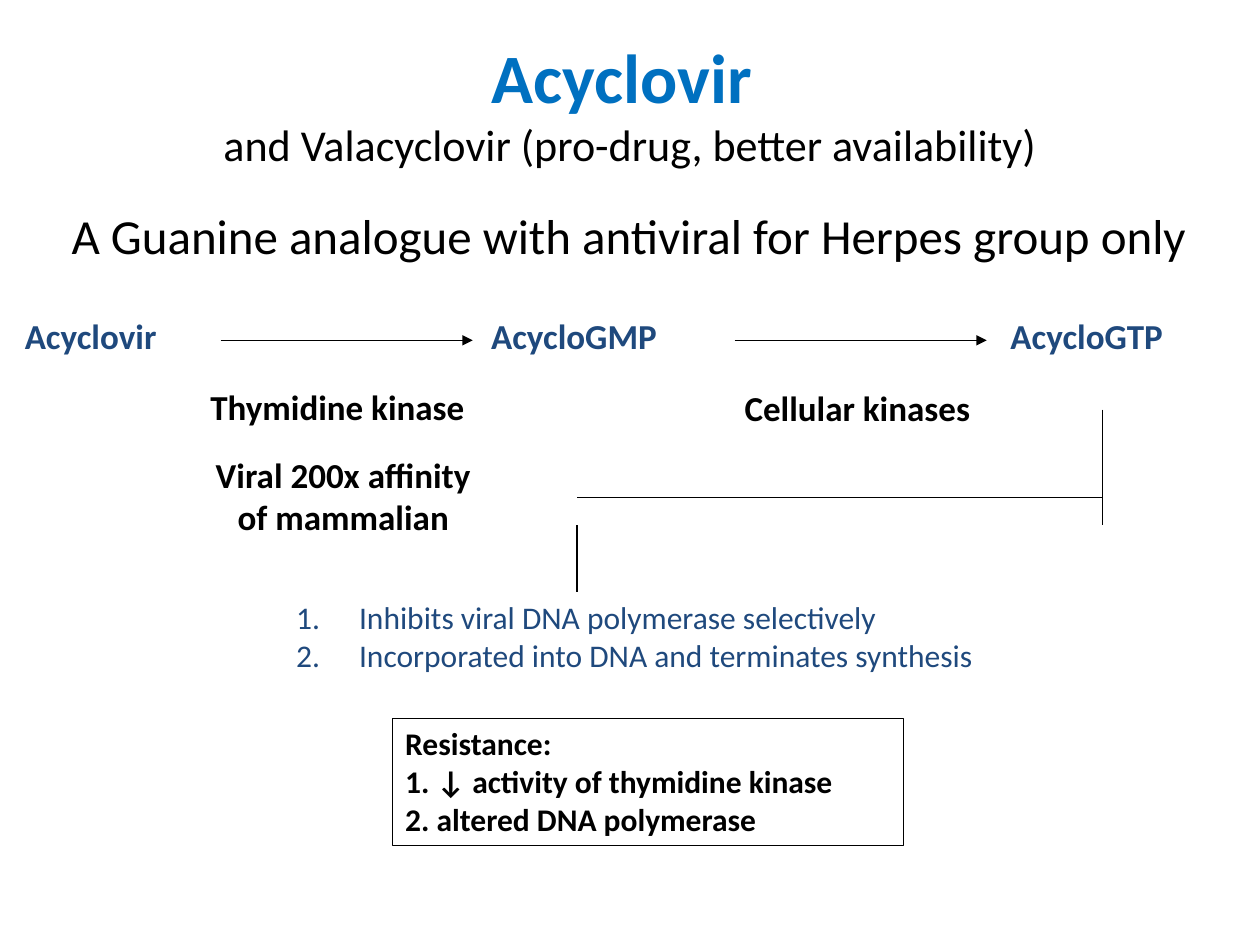
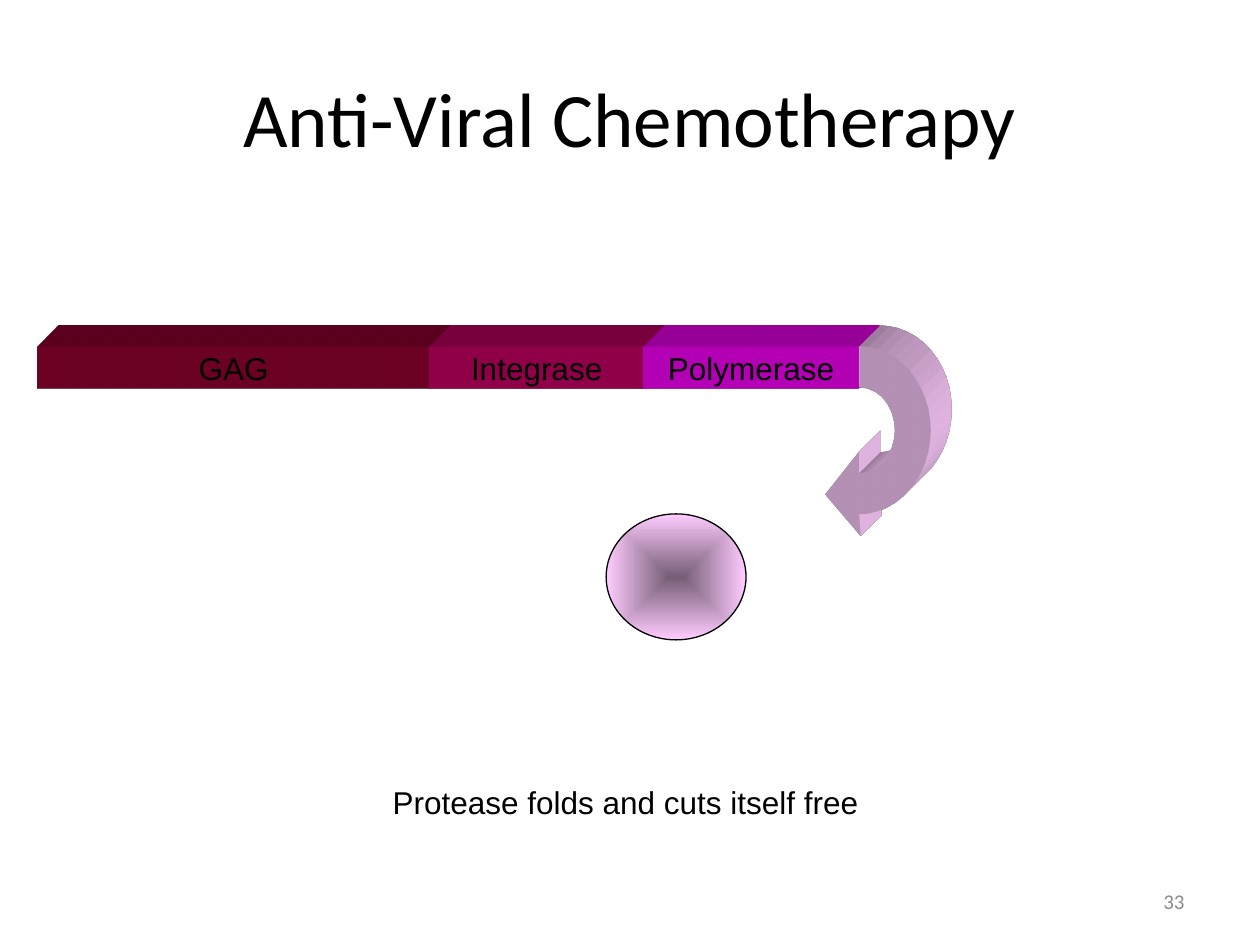
from dataclasses import dataclass
from math import cos, pi, sin

from lxml.etree import SubElement
from pptx import Presentation
from pptx.dml.color import RGBColor
from pptx.enum.shapes import MSO_CONNECTOR, MSO_SHAPE
from pptx.enum.text import MSO_ANCHOR, MSO_AUTO_SIZE, PP_ALIGN
from pptx.oxml import parse_xml
from pptx.oxml.ns import nsdecls, qn
from pptx.util import Cm, Pt


@dataclass(frozen=True)
class Theme:
    head: str = "Calibri"
    plain: str = "Arial"
    black: RGBColor = RGBColor(0, 0, 0)
    white: RGBColor = RGBColor(255, 255, 255)
    blue: RGBColor = RGBColor(0x00, 0x70, 0xC0)
    navy: RGBColor = RGBColor(0x1F, 0x49, 0x7D)
    grey: RGBColor = RGBColor(0x8C, 0x8C, 0x8C)
    wine: RGBColor = RGBColor(0x99, 0x00, 0x33)
    rose: RGBColor = RGBColor(0xCC, 0x00, 0x66)
    pink: RGBColor = RGBColor(0xFF, 0x00, 0xFF)
    pale: RGBColor = RGBColor(0xFF, 0xCC, 0xFF)
    dusk: RGBColor = RGBColor(0x76, 0x5E, 0x76)
    title: float = 44
    lead: float = 39.6
    sub: float = 25.2
    body: float = 28
    label: float = 20
    note: float = 18
    page: float = 12
    line: float = 0.75


T = Theme()


def write(shape, lines, size, color=T.black, face=T.head, bold=False,
          align=PP_ALIGN.LEFT, wrap=True):
    """Fill a shape with one paragraph per line, all in one style."""
    frame = shape.text_frame
    frame.text = "\n".join(lines)
    frame.word_wrap = wrap
    frame.auto_size = MSO_AUTO_SIZE.NONE
    for para in frame.paragraphs:
        para.alignment = align
        font = para.font
        font.name, font.size, font.bold = face, Pt(size), bold
        font.color.rgb = color
    return frame


def extrude(shape, color):
    """Give a shape a solid fill and an oblique depth to the top right."""
    shape.shadow.inherit = False
    shape.fill.solid()
    shape.fill.fore_color.rgb = color
    shape.line.fill.background()
    props = shape.fill._xPr
    props.append(parse_xml(
        f'<a:scene3d {nsdecls("a")}><a:camera prst="legacyObliqueTopRight"/>'
        '<a:lightRig rig="legacyFlat3" dir="b"/></a:scene3d>'))
    props.append(parse_xml(
        f'<a:sp3d {nsdecls("a")} extrusionH="430200" prstMaterial="legacyMatte">'
        '<a:bevelT w="13500" h="13500" prst="angle"/>'
        '<a:bevelB w="13500" h="13500" prst="angle"/>'
        f'<a:extrusionClr><a:srgbClr val="{color}"/></a:extrusionClr></a:sp3d>'))


deck = Presentation()
deck.slide_width, deck.slide_height = Cm(25.4), Cm(19.05)

# Shared title style
pages = []
for layout, text, size, color, bold, high in (
        (1, "Acyclovir ", T.lead, T.blue, True, 2.62),
        (5, "Anti-Viral Chemotherapy", T.title, T.black, False, 3.18)):
    page = deck.slides.add_slide(deck.slide_layouts[layout])
    title = page.shapes.title
    title.left, title.top = Cm(1.27), Cm(0.76)
    title.width, title.height = Cm(22.86), Cm(high)
    frame = write(title, [text], size, color, bold=bold, align=PP_ALIGN.CENTER)
    frame.vertical_anchor = MSO_ANCHOR.MIDDLE
    pages.append(page)
drug, fold = pages

# Slide 1: title and statement
para = drug.shapes.title.text_frame.paragraphs[0]
para.add_line_break()
run = para.add_run()
run.text = "and Valacyclovir (pro-drug, better availability)"
run.font.size, run.font.bold = Pt(T.sub), False
run.font.color.rgb = T.black

body = drug.placeholders[1]
body.left, body.top, body.width, body.height = Cm(1.19), Cm(4.01), Cm(23.5), Cm(1.7)
frame = write(body, ["A Guanine analogue with antiviral for Herpes group only"], T.body)
props = frame.paragraphs[0]._p.get_or_add_pPr()
props.set("marL", str(Cm(0.97)))
props.set("indent", str(-Cm(0.97)))
props.insert(0, parse_xml(f'<a:buNone {nsdecls("a")}/>'))

# Slide 1: pathway
for text, left, top, wide, color in (
        ("Acyclovir", 0.25, 6.22, 3.2, T.navy),
        ("AcycloGMP", 9.65, 6.22, 3.89, T.navy),
        ("AcycloGTP", 20.12, 6.22, 3.61, T.navy),
        ("Thymidine kinase", 3.99, 7.65, 6.48, T.black),
        ("Cellular kinases", 14.76, 7.67, 5.94, T.black)):
    label = drug.shapes.add_textbox(Cm(left), Cm(top), Cm(wide), Cm(1.12))
    label.fill.solid()
    label.fill.fore_color.rgb = T.white
    write(label, [text], T.label, color, bold=True, wrap=False)

label = drug.shapes.add_textbox(Cm(3.91), Cm(9.02), Cm(6.02), Cm(1.96))
write(label, ["Viral 200x affinity", "of mammalian"], T.label, bold=True,
      align=PP_ALIGN.CENTER, wrap=False)

for x1, y1, x2, y2, tip in (
        (4.45, 6.86, 9.53, 6.86, True),
        (14.81, 6.86, 19.89, 6.86, True),
        (22.23, 8.26, 22.23, 10.59, False),
        (22.23, 10.03, 11.63, 10.03, False),
        (11.63, 10.59, 11.63, 12.27, True)):
    link = drug.shapes.add_connector(MSO_CONNECTOR.STRAIGHT,
                                     Cm(x1), Cm(y1), Cm(x2), Cm(y2))
    link.line.color.rgb = T.black
    link.line.width = Pt(T.line)
    if tip:
        SubElement(link.line._get_or_add_ln(), qn("a:tailEnd"), type="triangle")
    SubElement(link._element.spPr, qn("a:effectLst"))

# Slide 1: effects and resistance
effects = drug.shapes.add_textbox(Cm(5.72), Cm(11.94), Cm(18.16), Cm(2.29))
effects.fill.solid()
effects.fill.fore_color.rgb = T.white
frame = write(effects, ["Inhibits viral DNA polymerase selectively",
                        "Incorporated into DNA and terminates synthesis"],
              T.note, T.navy)
for para in frame.paragraphs:
    props = para._p.get_or_add_pPr()
    props.set("marL", str(Cm(1.27)))
    props.set("indent", str(-Cm(1.27)))
    props.insert(0, parse_xml(f'<a:buAutoNum {nsdecls("a")} type="arabicPeriod"/>'))

box = drug.shapes.add_textbox(Cm(7.92), Cm(14.48), Cm(10.29), Cm(2.57))
box.line.color.rgb = T.black
box.line.width = Pt(T.line)
write(box, ["Resistance:", "1. ↓ activity of thymidine kinase",
            "2. altered DNA polymerase"], T.note, bold=True)

# Slide 2: page number
number = fold.shapes.add_textbox(Cm(18.21), Cm(17.65), Cm(5.92), Cm(1.02))
frame = write(number, ["33"], T.page, T.grey, align=PP_ALIGN.RIGHT)
frame.vertical_anchor = MSO_ANCHOR.MIDDLE

# Slide 2: protein chain, each part starting where the last one ends
left, top, thick = 0.76, 6.99, 0.84
for text, wide, color in (("GAG", 7.9, T.wine), ("Integrase", 4.32, T.rose),
                          ("Polymerase", 4.32, T.pink)):
    part = fold.shapes.add_shape(MSO_SHAPE.RECTANGLE, Cm(left), Cm(top),
                                 Cm(wide), Cm(thick))
    extrude(part, color)
    frame = write(part, [text], T.note, face=T.plain, align=PP_ALIGN.CENTER, wrap=False)
    frame.vertical_anchor = MSO_ANCHOR.MIDDLE
    left += wide

# Slide 2: protease hook, two half ellipses closed by an arrowhead
midx, midy, steps = 17.32, 8.67, 24
turns = [pi * i / steps - pi / 2 for i in range(steps + 1)]
outer = [(midx + 1.43 * cos(a), midy + 1.69 * sin(a)) for a in turns]
inner = [(midx + 0.71 * cos(a), midy + 0.86 * sin(a)) for a in reversed(turns)]
head = [(17.35, 10.8), (16.64, 9.96), (17.32, 9.09)]
dots = [(Cm(x), Cm(y)) for x, y in outer + head + inner]
pen = fold.shapes.build_freeform(*dots[0])
pen.add_line_segments(dots[1:], close=True)
extrude(pen.convert_to_shape(), T.pale)

# Slide 2: caption and particle
caption = fold.shapes.add_textbox(Cm(1.32), Cm(15.67), Cm(22.58), Cm(1.02))
write(caption, ["Protease folds and cuts itself free"], T.note, face=T.plain,
      align=PP_ALIGN.CENTER)

ball = fold.shapes.add_shape(MSO_SHAPE.OVAL, Cm(12.22), Cm(10.36), Cm(2.82), Cm(2.54))
ball.shadow.inherit = False
ball.line.color.rgb = T.black
ball.line.width = Pt(T.line)
ball.fill.gradient()
for stop, color in zip(ball.fill.gradient_stops, (T.dusk, T.pale)):
    stop.color.rgb = color
grad = ball._element.spPr.find(qn("a:gradFill"))
grad.remove(grad.find(qn("a:lin")))
shade = SubElement(grad, qn("a:path"), path="shape")
SubElement(shade, qn("a:fillToRect"), l="50000", t="50000", r="50000", b="50000")

deck.save("out.pptx")
